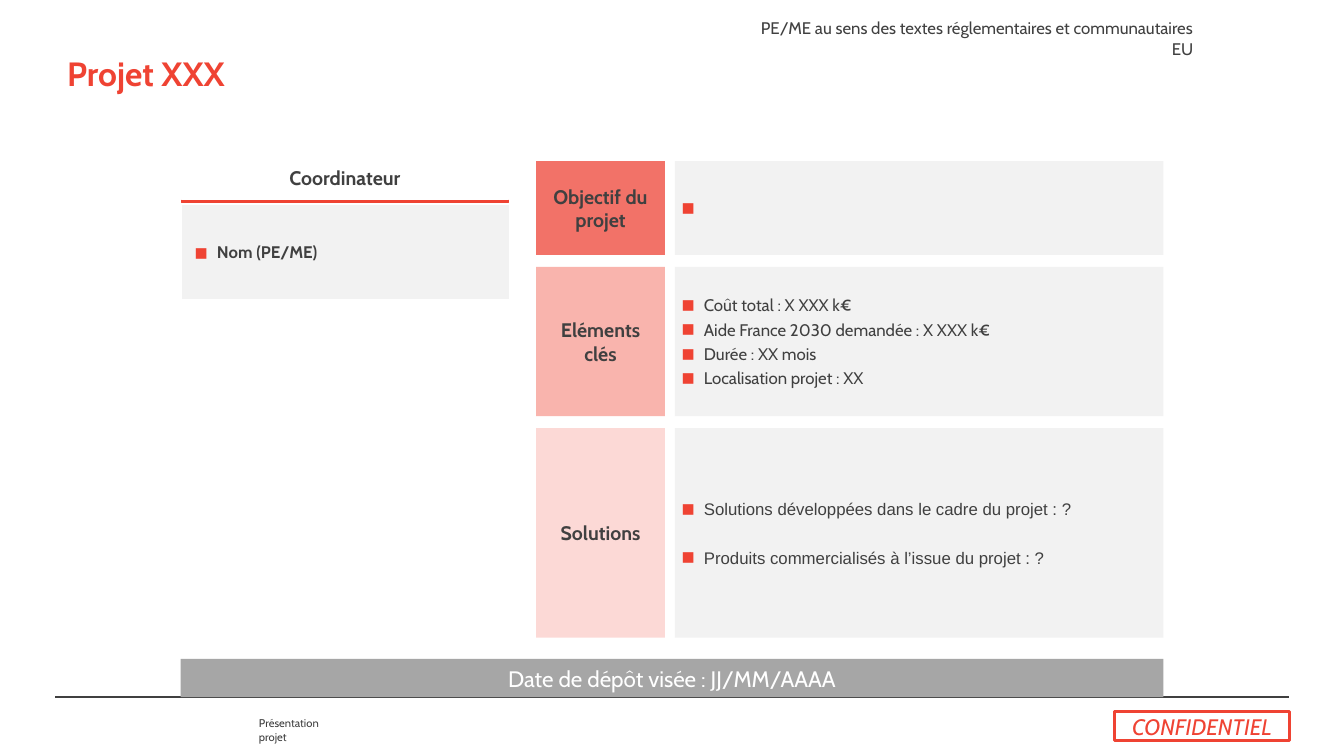
from dataclasses import dataclass

import lxml.etree
import pptx
import pptx.dml.color
import pptx.enum.shapes
import pptx.enum.text
import pptx.oxml.ns
import pptx.util

Pt = pptx.util.Pt
qn = pptx.oxml.ns.qn
Align = pptx.enum.text.PP_ALIGN
Anchor = pptx.enum.text.MSO_ANCHOR

RED = "EF4333"
DARK = "404040"
WHITE = "FFFFFF"
PALE = "F2F2F2"


@dataclass(frozen=True)
class Box:
    left: float
    top: float
    width: float
    height: float

    def lengths(self) -> tuple:
        return tuple(Pt(v) for v in (self.left, self.top, self.width, self.height))


@dataclass(frozen=True)
class Style:
    size: float = 12
    color: str = DARK
    bold: bool = False
    italic: bool = False
    font: str = "Cabin"
    align: Align = Align.LEFT


@dataclass(frozen=True)
class Section:
    label: str
    tint: str
    height: float
    items: str
    font: str = "Cabin"
    gap: float = 3


HEADING = Style(14, bold=True, align=Align.CENTER)
SECTIONS = [
    Section("Objectif du projet", "F27268", 67.1, " "),
    Section("Eléments\vclés", "F9B4AD", 106.5,
            "Coût total : X XXX k€\nAide France 2030 demandée : X XXX k€\n"
            "Durée : XX mois\nLocalisation projet : XX"),
    Section("Solutions", "FCD9D6", 149.7,
            "Solutions développées dans le cadre du projet : ?\n"
            "Produits commercialisés à l’issue du projet : ?", "Arial", 20.5),
]


def rgb(color: str) -> pptx.dml.color.RGBColor:
    return pptx.dml.color.RGBColor.from_string(color)


def add_element(parent, tag: str, **attributes: str):
    return lxml.etree.SubElement(parent, qn(tag), attributes)


def write(frame, text: str, style: Style) -> None:
    frame.text = text
    for paragraph in frame.paragraphs:
        paragraph.alignment = style.align
        for run in paragraph.runs:
            run.font.name = style.font
            run.font.size = Pt(style.size)
            run.font.bold = style.bold
            run.font.italic = style.italic
            run.font.color.rgb = rgb(style.color)


def add_bullets(frame, gap: float = 3) -> None:
    for paragraph in frame.paragraphs:
        paragraph.space_after = Pt(gap)
        properties = paragraph._p.get_or_add_pPr()
        properties.set("marL", str(Pt(18)))
        properties.set("indent", str(-Pt(16)))
        add_element(add_element(properties, "a:buClr"), "a:srgbClr", val=RED)
        add_element(properties, "a:buSzPct", val="130000")
        add_element(properties, "a:buFont", typeface="Arial")
        add_element(properties, "a:buChar", char="■")


def set_insets(frame, horizontal: float, vertical: float) -> None:
    frame.margin_left = frame.margin_right = Pt(horizontal)
    frame.margin_top = frame.margin_bottom = Pt(vertical)


def add_panel(slide, box: Box, fill: str = "", line: str = "", line_width: float = 0.75):
    panel = slide.shapes.add_shape(
        pptx.enum.shapes.MSO_SHAPE.RECTANGLE, *box.lengths())
    panel.shadow.inherit = False
    if fill:
        panel.fill.solid()
        panel.fill.fore_color.rgb = rgb(fill)
    else:
        panel.fill.background()
    if line:
        panel.line.color.rgb = rgb(line)
        panel.line.width = Pt(line_width)
    else:
        panel.line.fill.background()
    panel.text_frame.word_wrap = True
    panel.text_frame.vertical_anchor = Anchor.MIDDLE
    return panel


def add_note(slide, box: Box, text: str, style: Style):
    frame = slide.shapes.add_textbox(*box.lengths()).text_frame
    frame.word_wrap = True
    write(frame, text, style)
    return frame


def add_title(slide) -> None:
    title = slide.shapes.title
    title.left, title.top, title.width, title.height = Box(48, 21.6, 864, 60.5).lengths()
    frame = title.text_frame
    frame.auto_size = pptx.enum.text.MSO_AUTO_SIZE.NONE
    frame.vertical_anchor = Anchor.MIDDLE
    set_insets(frame, 0, 3.6)
    write(frame, "Projet XXX", Style(24, RED, bold=True))


def add_footer(slide) -> None:
    footer = add_note(slide, Box(185, 511.9, 63.4, 9.4), "Présentation projet", Style(8))
    set_insets(footer, 0, 0)
    rule = slide.shapes.add_connector(
        pptx.enum.shapes.MSO_CONNECTOR.STRAIGHT, Pt(39.3), Pt(498), Pt(920.8), Pt(498))
    rule.line.color.rgb = rgb(DARK)
    rule.line.width = Pt(1.5)
    add_element(rule._element.spPr, "a:effectLst")


def add_coordinator(slide) -> None:
    heading = add_panel(slide, Box(129.6, 110.9, 233.5, 31.7), WHITE, WHITE)
    effects = heading._element.spPr.find(qn("a:effectLst"))
    shadow = add_element(effects, "a:outerShdw", blurRad="0", dist=str(Pt(2)),
                         dir="5400000", algn="t", rotWithShape="0")
    add_element(shadow, "a:srgbClr", val=RED)
    heading.text_frame.vertical_anchor = Anchor.BOTTOM
    set_insets(heading.text_frame, 7.2, 7.2)
    write(heading.text_frame, "Coordinateur", HEADING)

    partners = slide.shapes.add_table(1, 1, *Box(129.8, 146, 234.3, 69).lengths()).table
    name = partners.cell(0, 0)
    name.fill.solid()
    name.fill.fore_color.rgb = rgb(PALE)
    name.vertical_anchor = Anchor.MIDDLE
    write(name.text_frame, "Nom (PE/ME)", Style(bold=True))
    add_bullets(name.text_frame)
    border = lxml.etree.Element(qn("a:lnB"), w=str(Pt(3)))
    add_element(add_element(border, "a:solidFill"), "a:srgbClr", val=WHITE)
    name._tc.get_or_add_tcPr().insert(0, border)


def add_sections(slide) -> None:
    top = 115
    for section in SECTIONS:
        label = add_panel(slide, Box(383, top, 92, section.height), section.tint)
        set_insets(label.text_frame, 0, 0)
        write(label.text_frame, section.label, HEADING)
        content = add_panel(slide, Box(482, top, 349, section.height), PALE)
        set_insets(content.text_frame, 2.8, 2.8)
        write(content.text_frame, section.items, Style(font=section.font))
        add_bullets(content.text_frame, section.gap)
        top += section.height + 8.6


def main() -> None:
    deck = pptx.Presentation()
    deck.slide_width, deck.slide_height = Pt(960), Pt(540)
    slide = deck.slides.add_slide(deck.slide_layouts.get_by_name("Title Only"))
    add_title(slide)
    add_footer(slide)
    add_coordinator(slide)
    add_sections(slide)
    deadline = add_panel(slide, Box(129, 470.7, 702, 27.3), "A6A6A6")
    write(deadline.text_frame, "Date de dépôt visée : JJ/MM/AAAA",
          Style(16, WHITE, align=Align.CENTER))
    add_note(slide, Box(529, 9.4, 330.5, 21.6),
             "PE/ME au sens des textes réglementaires et communautaires EU",
             Style(align=Align.RIGHT))
    stamp = add_panel(slide, Box(796.3, 508.3, 124.6, 20.9), line=RED, line_width=2)
    write(stamp.text_frame, "CONFIDENTIEL",
          Style(16, RED, italic=True, align=Align.CENTER))
    deck.save("out.pptx")


if __name__ == "__main__":
    main()
